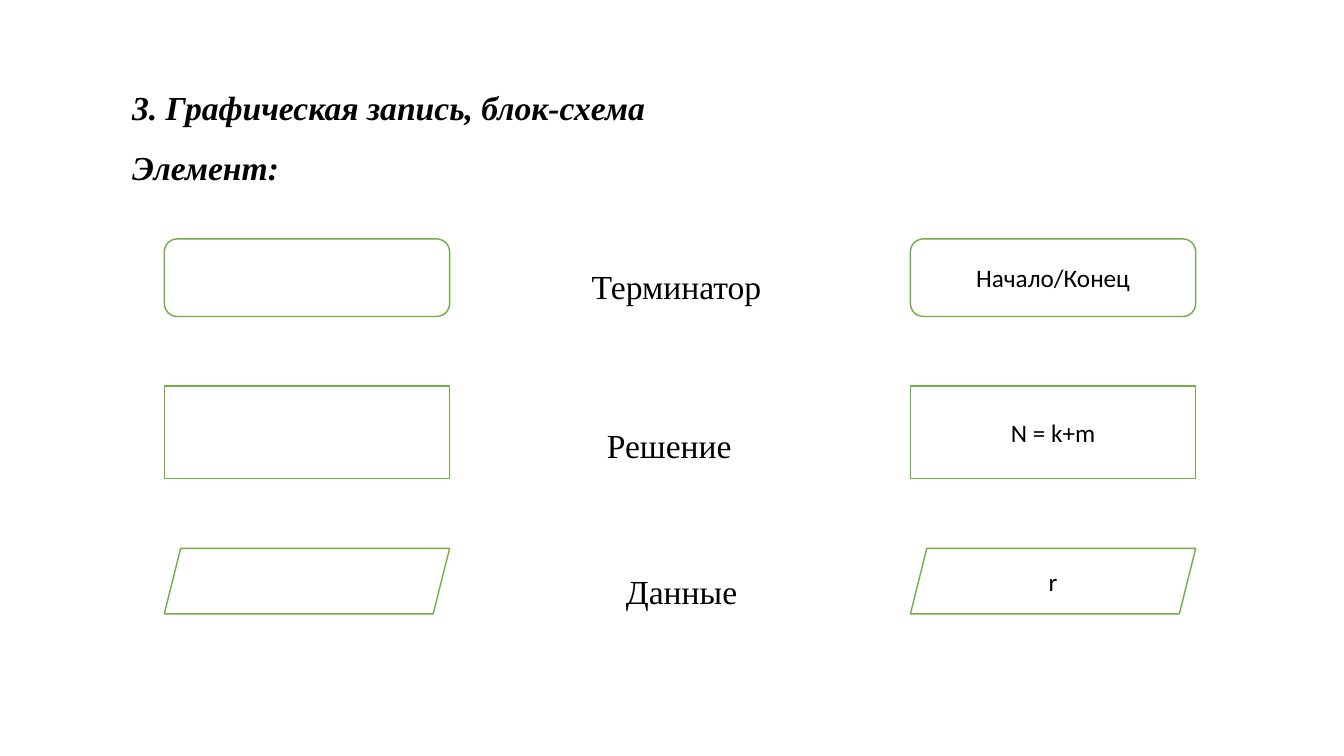
from pptx import Presentation
from pptx.dml.color import RGBColor
from pptx.enum.shapes import MSO_SHAPE
from pptx.enum.text import MSO_ANCHOR, MSO_AUTO_SIZE, PP_ALIGN
from pptx.util import Inches, Pt

ROUNDED, RECTANGLE, PARALLELOGRAM = (
    MSO_SHAPE.ROUNDED_RECTANGLE, MSO_SHAPE.RECTANGLE, MSO_SHAPE.PARALLELOGRAM)
TOP, MIDDLE = MSO_ANCHOR.TOP, MSO_ANCHOR.MIDDLE
NO_AUTOFIT = MSO_AUTO_SIZE.NONE
CENTER, JUSTIFY = PP_ALIGN.CENTER, PP_ALIGN.JUSTIFY

# Content
HEADING = ["3. Графическая запись, блок-схема", "Элемент:"]
# outline, row top, row height, example, name, (name left, top, width)
ELEMENTS = [
    (ROUNDED, 2.37, 0.77, "Начало/Конец", "Терминатор", (5.77, 2.39, 2.58)),
    (RECTANGLE, 3.83, 0.92, "N = k+m", "Решение", (5.92, 3.97, 1.51)),
    (PARALLELOGRAM, 5.44, 0.65, "r", "Данные", (6.11, 5.41, 1.51)),
]

# Grid and style
SYMBOL_LEFT, EXAMPLE_LEFT, SYMBOL_WIDTH = 1.63, 9.03, 2.83
NAME_HEIGHT = 0.71
BLACK = RGBColor(0x00, 0x00, 0x00)
WHITE = RGBColor(0xFF, 0xFF, 0xFF)
GREEN = RGBColor(0x70, 0xAD, 0x47)
SERIF, SANS = "Times New Roman", "Calibri"

prs = Presentation()
prs.slide_width, prs.slide_height = Inches(13.33), Inches(7.5)
slide = prs.slides.add_slide(prs.slide_layouts[5])


def write(frame, lines, font, size, align, anchor, spacing=None, accent=None):
    frame.text = "\n".join(lines)
    frame.word_wrap = True
    frame.auto_size = NO_AUTOFIT
    frame.vertical_anchor = anchor
    for paragraph in frame.paragraphs:
        paragraph.alignment = align
        paragraph.line_spacing = spacing
        for run in paragraph.runs:
            run.font.name, run.font.size = font, Pt(size)
            run.font.bold = run.font.italic = accent
            run.font.color.rgb = BLACK


def add_symbol(outline, left, top, height, label=""):
    symbol = slide.shapes.add_shape(
        outline, Inches(left), Inches(top), Inches(SYMBOL_WIDTH), Inches(height))
    symbol.shadow.inherit = False
    symbol.fill.solid()
    symbol.fill.fore_color.rgb = WHITE
    symbol.line.color.rgb = GREEN
    symbol.line.width = Pt(1)
    if label:
        write(symbol.text_frame, [label], SANS, 18, CENTER, MIDDLE)


# Heading
heading = slide.shapes.title
heading.left, heading.top = Inches(1.21), Inches(0.61)
heading.width, heading.height = Inches(11.02), Inches(2.52)
write(heading.text_frame, HEADING, SERIF, 24, JUSTIFY, TOP, 1.5, True)

# Rows: symbol, name, example
for outline, top, height, example, name, (name_left, name_top, name_width) in ELEMENTS:
    add_symbol(outline, SYMBOL_LEFT, top, height)
    name_box = slide.shapes.add_textbox(
        Inches(name_left), Inches(name_top), Inches(name_width), Inches(NAME_HEIGHT))
    write(name_box.text_frame, [name], SERIF, 24, JUSTIFY, TOP, 1.5)
    add_symbol(outline, EXAMPLE_LEFT, top, height, example)

prs.save("out.pptx")
